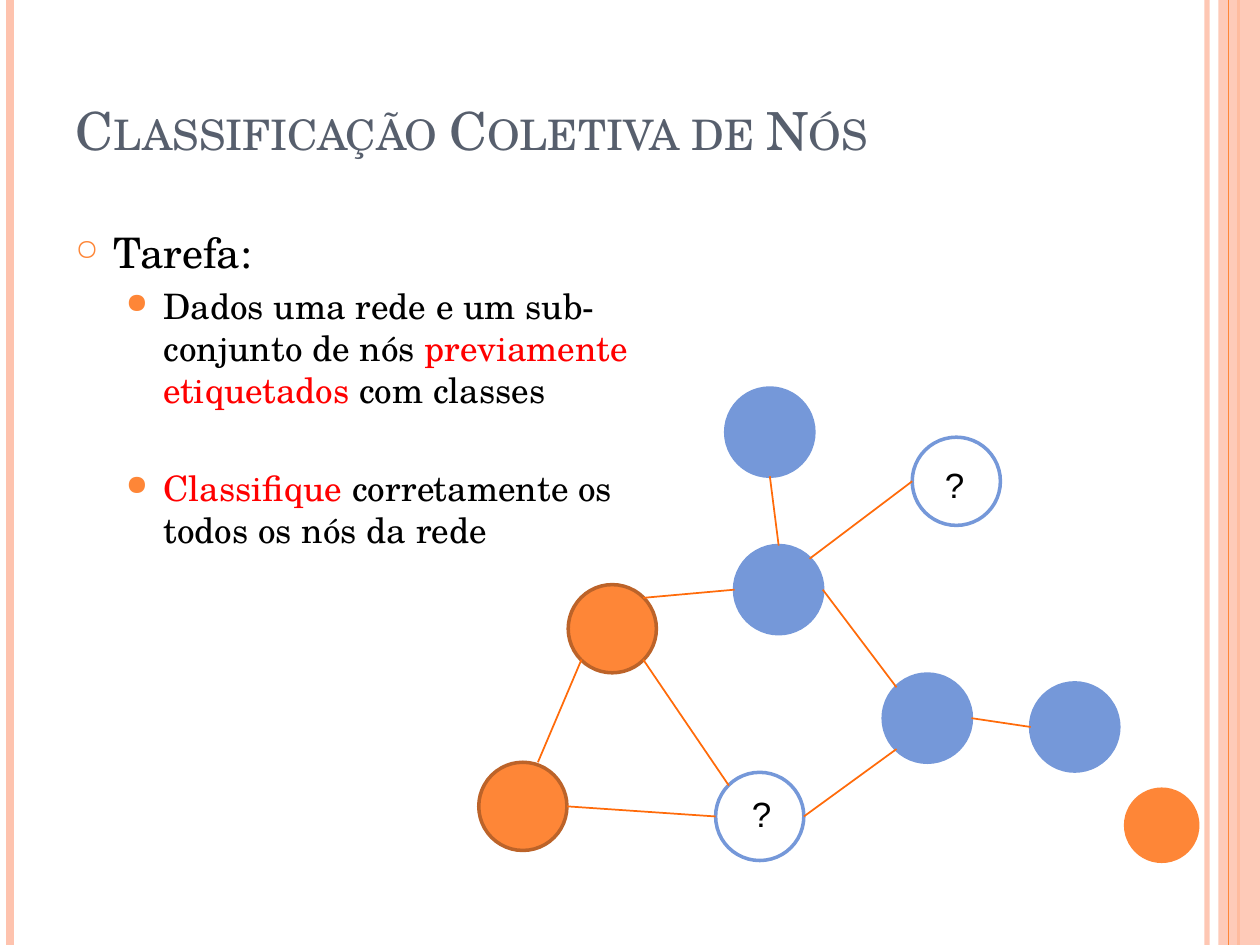
from lxml import etree
from pptx import Presentation
from pptx.dml.color import RGBColor
from pptx.enum.shapes import MSO_CONNECTOR, MSO_SHAPE
from pptx.enum.text import MSO_ANCHOR
from pptx.oxml.ns import qn
from pptx.util import Inches, Pt

BLACK = RGBColor(0x00, 0x00, 0x00)
RED = RGBColor(0xFF, 0x00, 0x00)
SLATE = RGBColor(0x57, 0x5F, 0x6D)
PINK = RGBColor(0xFE, 0xC3, 0xAE)
ORANGE = RGBColor(0xFE, 0x86, 0x37)
BROWN = RGBColor(0xBC, 0x63, 0x29)
BLUE = RGBColor(0x75, 0x98, 0xD9)
EDGE = RGBColor(0xFF, 0x6B, 0x0A)
SERIF, SANS = "TeX Gyre Schola", "Arial"

WIDTH, HEIGHT = 10, 7.5
NODE = 0.7

TITLE = "Classificação Coletiva de Nós"
BODY = [
    (0, 24, 0, [("Tarefa:", BLACK)]),
    (1, 20, 4, [("Dados uma rede e um sub-conjunto de nós ", BLACK),
                ("previamente etiquetados ", RED), ("com classes", BLACK)]),
    (1, 20, 32, [("Classifique ", RED),
                 ("corretamente os todos os nós da rede", BLACK)]),
]
LEVELS = [
    {"marL": 0.3, "char": "○", "size": 70},
    {"marL": 0.7, "char": "●", "size": 80},
]

STRIPES_BELOW = [(9.58, PINK, 3, 93), (0.08, PINK, 4.5, 100), (9.83, ORANGE, 1.5, 100)]
STRIPES_ABOVE = [(9.75, ORANGE, 0.75, 100)]

STYLES = {"orange": (ORANGE, BROWN), "blue": (BLUE, BLUE), "unknown": (None, BLUE)}
NODES = {
    "A": (4.51, 4.64, "orange"),
    "B": (7.01, 5.35, "blue"),
    "C": (5.68, 6.13, "unknown"),
    "D": (5.83, 4.33, "blue"),
    "E": (5.76, 3.08, "blue"),
    "F": (7.24, 3.47, "unknown"),
    "G": (8.18, 5.42, "blue"),
    "H": (3.8, 6.05, "orange"),
}
SITES = {
    "top": (0.5, 0), "bottom": (0.5, 1), "left": (0, 0.5), "right": (1, 0.5),
    "top left": (0.15, 0.15), "top right": (0.85, 0.15),
    "bottom left": (0.15, 0.85), "bottom right": (0.85, 0.85),
    "upper edge": (0.67, 0),
}
EDGES = [
    ("A", "bottom right", "C", "top left"),
    ("H", "right", "C", "left"),
    ("A", "top right", "D", "left"),
    ("D", "right", "B", "top left"),
    ("C", "right", "B", "bottom left"),
    ("D", "top", "E", "bottom"),
    ("D", "top right", "F", "left"),
    ("A", "bottom left", "H", "upper edge"),
    ("B", "right", "G", "left"),
]
MARKS = [(5.87, 6.24), (7.4, 3.63)]


def set_alpha(sp, percent):
    if percent < 100:
        clr = next(sp._element.spPr.iter(qn("a:srgbClr")))
        etree.SubElement(clr, qn("a:alpha"), val=str(percent * 1000))


def add_line(s, start, end, color, width, alpha=100):
    sp = s.shapes.add_connector(MSO_CONNECTOR.STRAIGHT, *map(Inches, start + end))
    sp.line.color.rgb = color
    sp.line.width = Pt(width)
    set_alpha(sp, alpha)
    etree.SubElement(sp._element.spPr, qn("a:effectLst"))


def add_stripes(s, stripes):
    for x, *style in stripes:
        add_line(s, (x, 0), (x, HEIGHT), *style)


def add_shape(s, kind, box, fill, line=None):
    sp = s.shapes.add_shape(kind, *map(Inches, box))
    sp.shadow.inherit = False
    if fill is None:
        sp.fill.background()
    else:
        sp.fill.solid()
        sp.fill.fore_color.rgb = fill
    if line is None:
        sp.line.fill.background()
    else:
        sp.line.color.rgb = line
        sp.line.width = Pt(2)
    return sp


def add_text(s, box, wrap=True, anchor=MSO_ANCHOR.TOP):
    tf = s.shapes.add_textbox(*map(Inches, box)).text_frame
    tf.word_wrap = wrap
    tf.vertical_anchor = anchor
    return tf


def add_run(p, text, color, size, font):
    r = p.add_run()
    r.text = text
    r.font.color.rgb = color
    for name, value in {"size": Pt(size), "name": font}.items():
        setattr(r.font, name, value)
    return r


def set_bullet(p, marL, char, size):
    pPr = p._p.get_or_add_pPr()
    pPr.set("marL", str(Inches(marL)))
    pPr.set("indent", str(Inches(-0.3)))
    clr = etree.SubElement(pPr, qn("a:buClr"))
    etree.SubElement(clr, qn("a:srgbClr"), val=str(ORANGE))
    etree.SubElement(pPr, qn("a:buSzPct"), val=str(size * 1000))
    etree.SubElement(pPr, qn("a:buChar"), char=char)


def site(node, name):
    x, y, _ = NODES[node]
    dx, dy = SITES[name]
    return x + dx * NODE, y + dy * NODE


def main():
    prs = Presentation()
    prs.slide_width, prs.slide_height = Inches(WIDTH), Inches(HEIGHT)
    s = prs.slides.add_slide(prs.slide_layouts[6])

    add_stripes(s, STRIPES_BELOW)
    band = add_shape(s, MSO_SHAPE.RECTANGLE, (9.67, 0, 0.33, HEIGHT), PINK)
    set_alpha(band, 87)
    add_stripes(s, STRIPES_ABOVE)
    add_shape(s, MSO_SHAPE.OVAL, (8.92, 6.25, 0.6, 0.6), ORANGE)

    tf = add_text(s, (0.5, 0.08, 8.17, 1.25), anchor=MSO_ANCHOR.BOTTOM)
    r = add_run(tf.paragraphs[0], TITLE, SLATE, 30, SERIF)
    r._r.get_or_add_rPr().set("cap", "small")

    tf = add_text(s, (0.5, 1.75, 4.66, 5.33))
    for i, (level, size, before, runs) in enumerate(BODY):
        p = tf.add_paragraph() if i else tf.paragraphs[0]
        p.level = level
        p.space_before = Pt(before)
        set_bullet(p, **LEVELS[level])
        for text, color in runs:
            add_run(p, text, color, size, SERIF)

    for x, y, style in NODES.values():
        add_shape(s, MSO_SHAPE.OVAL, (x, y, NODE, NODE), *STYLES[style])
    for a, a_site, b, b_site in EDGES:
        add_line(s, site(a, a_site), site(b, b_site), EDGE, 1)
    for x, y in MARKS:
        tf = add_text(s, (x, y, 0.36, 0.44), wrap=False)
        add_run(tf.paragraphs[0], "?", BLACK, 20, SANS)

    prs.save("out.pptx")


if __name__ == "__main__":
    main()
